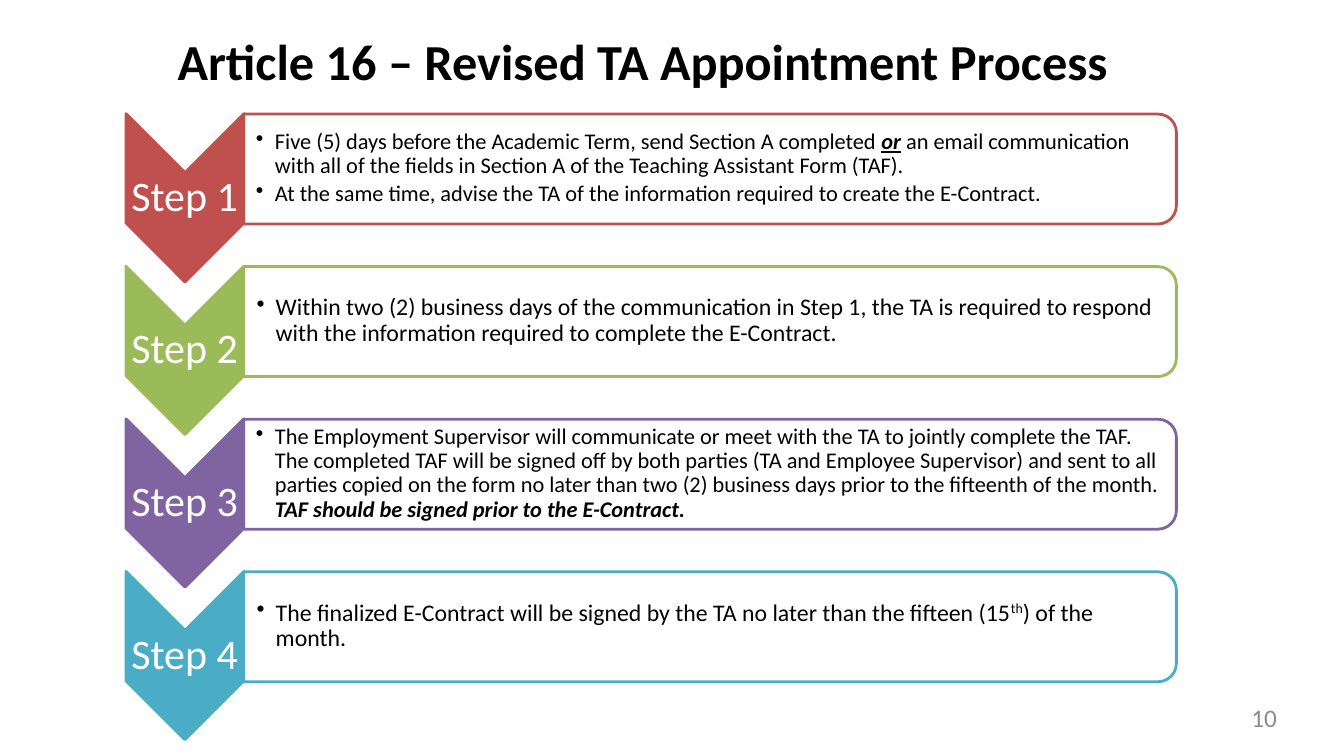
from lxml import etree
from pptx import Presentation
from pptx.dml.color import RGBColor
from pptx.enum.shapes import MSO_SHAPE
from pptx.enum.text import MSO_ANCHOR, MSO_AUTO_SIZE, PP_ALIGN
from pptx.oxml.ns import qn
from pptx.util import Cm, Pt

CHEVRON = MSO_SHAPE.CHEVRON
ROUNDED_BAR = MSO_SHAPE.ROUND_2_SAME_RECTANGLE
TOP, MIDDLE = MSO_ANCHOR.TOP, MSO_ANCHOR.MIDDLE
NO_AUTOFIT = MSO_AUTO_SIZE.NONE
LEFT, CENTER, RIGHT = PP_ALIGN.LEFT, PP_ALIGN.CENTER, PP_ALIGN.RIGHT

BLACK = RGBColor(0x00, 0x00, 0x00)
WHITE = RGBColor(0xFF, 0xFF, 0xFF)
GRAY = RGBColor(0x8C, 0x8C, 0x8C)
RED = RGBColor(0xC0, 0x50, 0x4D)
GREEN = RGBColor(0x9B, 0xBB, 0x59)
PURPLE = RGBColor(0x80, 0x64, 0xA2)
AQUA = RGBColor(0x4B, 0xAC, 0xC6)

STEP_PITCH = 3.845
BULLET_INDENT = Cm(0.48)

# Each step: colour, text size, left inset, paragraphs of (text, styles) runs
STEPS = [
    (RED, 16, 0.3, [
        [("Five (5) days before the Academic Term, send Section A completed ", ""),
         ("or", "bold italic underline"),
         (" an email communication with all of the fields in Section A of the "
          "Teaching Assistant Form (TAF).", "")],
        [("At the same time, advise the TA of the information required to "
          "create the E-Contract.", "")],
    ]),
    (GREEN, 17, 0.32, [
        [("Within two (2) business days of the communication in Step 1, the TA is "
          "required to respond with the information required to complete the "
          "E-Contract.", "")],
    ]),
    (PURPLE, 16, 0.3, [
        [("The Employment Supervisor will communicate or meet with the TA to jointly "
          "complete the TAF. The completed TAF will be signed off by both parties "
          "(TA and Employee Supervisor) and sent to all parties copied on the form "
          "no later than two (2) business days prior to the fifteenth of the month. ",
          ""),
         ("TAF should be signed prior to the E-Contract.", "bold italic")],
    ]),
    (AQUA, 17, 0.32, [
        [("The finalized E-Contract will be signed by the TA no later than the "
          "fifteen (15", ""),
         ("th", "superscript"),
         (") of the month.", "")],
    ]),
]


class SlideBuilder:
    """Holds the text style and the slide being built."""

    def __init__(self, slide, font_name):
        self.slide = slide
        self.font_name = font_name

    def format_frame(self, frame, insets, anchor):
        frame.word_wrap = True
        frame.auto_size = NO_AUTOFIT
        frame.vertical_anchor = anchor
        left, top, right, bottom = (Cm(inset) for inset in insets)
        frame.margin_left, frame.margin_top = left, top
        frame.margin_right, frame.margin_bottom = right, bottom

    def add_run(self, paragraph, text, size, color, styles=""):
        run = paragraph.add_run()
        run.text = text
        font = run.font
        font.name, font.size = self.font_name, Pt(size)
        font.color.rgb = color
        font.bold = "bold" in styles
        font.italic = "italic" in styles
        font.underline = "underline" in styles
        if "superscript" in styles:
            font._element.set("baseline", "30000")

    def title(self, text, box):
        title = self.slide.shapes.title
        title.left, title.top, title.width, title.height = (Cm(v) for v in box)
        self.format_frame(title.text_frame, (0.25, 0.13, 0.89, 0.13), TOP)
        paragraph = title.text_frame.paragraphs[0]
        paragraph.alignment = CENTER
        self.add_run(paragraph, text, 36, BLACK, "bold")

    def text_box(self, box, insets, anchor):
        shape = self.slide.shapes.add_textbox(*(Cm(v) for v in box))
        self.format_frame(shape.text_frame, insets, anchor)
        return shape.text_frame

    def label(self, text, box, size, color, alignment, inset=0.0, anchor=TOP):
        frame = self.text_box(box, [inset] * 4, anchor)
        paragraph = frame.paragraphs[0]
        paragraph.alignment = alignment
        paragraph.line_spacing = 0.9 if anchor == MIDDLE else 1.0
        self.add_run(paragraph, text, size, color)

    def turned_shape(self, kind, box, fill, line, opacity=100):
        shape = self.slide.shapes.add_shape(kind, *(Cm(v) for v in box))
        shape.rotation = 90
        shape.shadow.inherit = False
        shape.fill.solid()
        shape.fill.fore_color.rgb = fill
        shape.line.color.rgb = line
        shape.line.width = Pt(2)
        if opacity < 100:
            color = shape._element.spPr.find(qn("a:solidFill"))[0]
            etree.SubElement(color, qn("a:alpha"), val=str(opacity * 1000))

    def bullets(self, paragraphs, box, size, left_inset):
        frame = self.text_box(box, (left_inset, 0.03, 0.03, 0.03), MIDDLE)
        for index, runs in enumerate(paragraphs):
            paragraph = frame.add_paragraph() if index else frame.paragraphs[0]
            paragraph.level = 1
            paragraph.alignment = LEFT
            paragraph.line_spacing = 0.9
            paragraph.space_after = Pt(0.15 * size)
            properties = paragraph._p.get_or_add_pPr()
            properties.set("marL", str(BULLET_INDENT))
            properties.set("indent", str(-BULLET_INDENT))
            etree.SubElement(properties, qn("a:buChar"), char="•")
            for text, styles in runs:
                self.add_run(paragraph, text, size, BLACK, styles)

    def step(self, number, color, size, left_inset, paragraphs):
        offset = (number - 1) * STEP_PITCH
        self.turned_shape(CHEVRON, (2.54, 3.5 + offset, 4.24, 2.97), color, color)
        self.label(f"Step {number}", (3.17, 4.35 + offset, 2.97, 1.27),
                   30, WHITE, CENTER, 0.05, MIDDLE)
        self.turned_shape(ROUNDED_BAR, (16.51, -7.49 + offset, 2.77, 23.5),
                          WHITE, color, opacity=90)
        self.bullets(paragraphs, (6.15, 3 + offset, 23.34, 2.49), size, left_inset)


def main():
    presentation = Presentation()
    presentation.slide_width, presentation.slide_height = Cm(33.87), Cm(19.05)
    title_only = presentation.slide_layouts[5]
    builder = SlideBuilder(presentation.slides.add_slide(title_only), "Calibri")

    # Title and page number
    builder.title("Article 16 – Revised TA Appointment Process",
                  (2.34, 0.64, 28.37, 1.8))
    builder.label("10", (24.38, 17.7, 7.8, 0.97), 18, GRAY, RIGHT)

    # Process steps
    for number, step in enumerate(STEPS, start=1):
        builder.step(number, *step)

    presentation.save("out.pptx")


if __name__ == "__main__":
    main()
